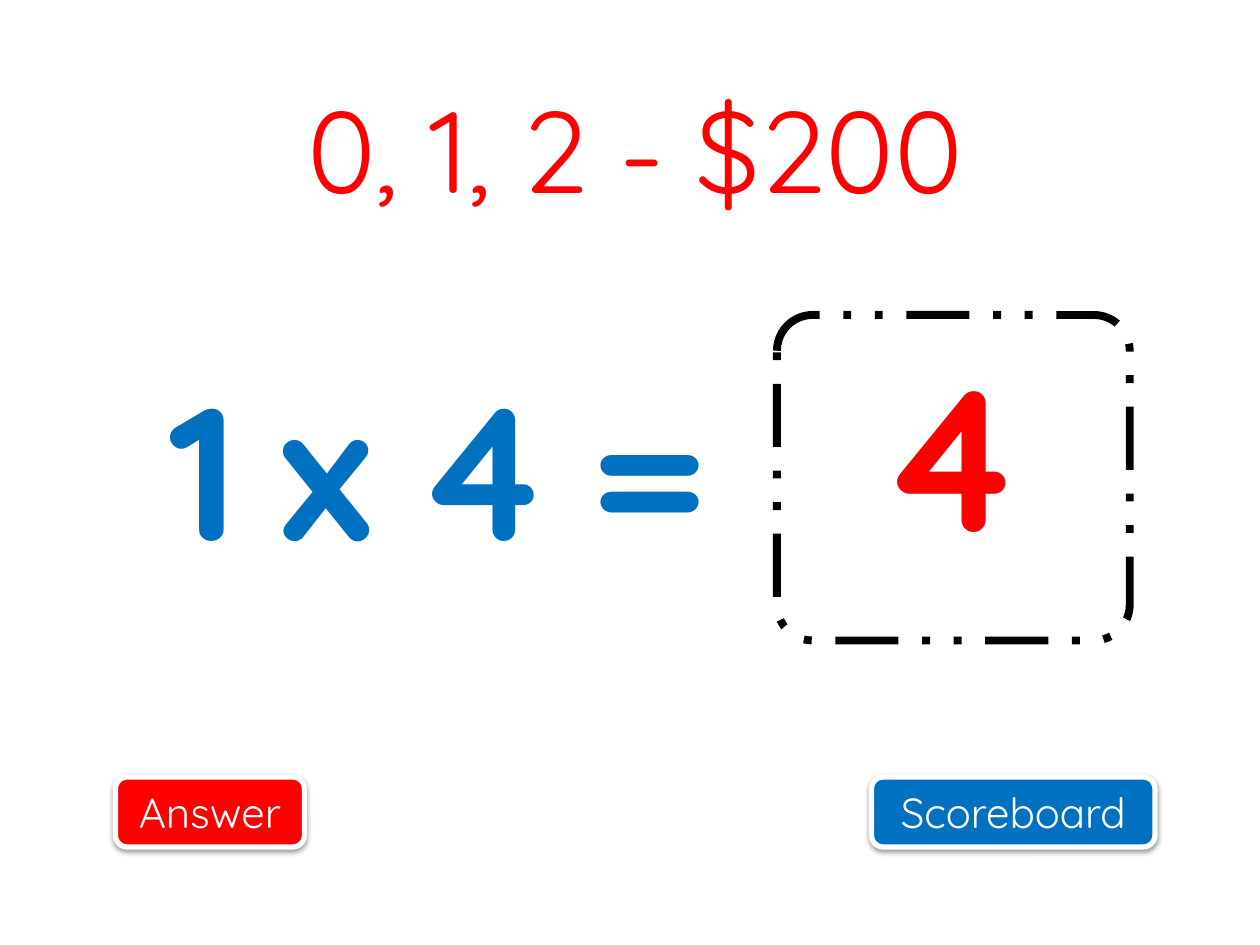
from dataclasses import dataclass

import pptx
import pptx.dml.color
import pptx.enum.dml
import pptx.enum.shapes
import pptx.enum.text
import pptx.oxml
import pptx.oxml.ns
import pptx.util

Pt = pptx.util.Pt
RGB = pptx.dml.color.RGBColor
Align = pptx.enum.text.PP_ALIGN
Anchor = pptx.enum.text.MSO_ANCHOR


@dataclass(frozen=True)
class Theme:
    font: str = "Quicksand"
    red: RGB = RGB(0xFF, 0x00, 0x00)
    blue: RGB = RGB(0x00, 0x70, 0xC0)
    white: RGB = RGB(0xFF, 0xFF, 0xFF)
    black: RGB = RGB(0x00, 0x00, 0x00)
    button_size: float = 24
    title_size: float = 66
    question_size: float = 108
    answer_size: float = 115


THEME = Theme()


@dataclass(frozen=True)
class Box:
    left: float
    top: float
    width: float
    height: float

    def lengths(self) -> tuple:
        return Pt(self.left), Pt(self.top), Pt(self.width), Pt(self.height)


@dataclass(frozen=True)
class Button:
    text: str
    box: Box
    fill: RGB


@dataclass(frozen=True)
class Label:
    text: str
    box: Box
    size: float
    color: RGB
    bold: bool = False
    align: Align = Align.CENTER
    anchor: Anchor = Anchor.TOP
    spacing: float = 0


BUTTONS = [
    Button("Answer", Box(66, 444, 108, 40), THEME.red),
    Button("Scoreboard", Box(498, 444, 162, 40), THEME.blue),
]
QUESTION = Label("1 x 4 =", Box(90, 198, 570, 168), THEME.question_size, THEME.blue,
                 bold=True, align=Align.LEFT, spacing=-3)
ANSWER_FRAME = Box(444, 180, 201.6, 186)
ANSWER = Label("4", Box(462, 186, 162, 168), THEME.answer_size, THEME.red, bold=True)
TITLE = Label("0, 1, 2 - $200", Box(66, 48, 594, 72), THEME.title_size, THEME.red,
              anchor=Anchor.MIDDLE)


def write_text(s, text: str, size: float, color: RGB, bold: bool, align: Align,
               anchor: Anchor, spacing: float = 0) -> None:
    tf = s.text_frame
    tf.word_wrap = True
    tf.vertical_anchor = anchor
    p = tf.paragraphs[0]
    p.alignment = align
    r = p.add_run()
    r.text = text
    p.font.name = THEME.font
    p.font.size = Pt(size)
    p.font.bold = bold
    p.font.color.rgb = color
    if spacing:
        r._r.get_or_add_rPr().set("spc", str(round(spacing * 100)))


def add_round_rect(slide, box: Box, fill: RGB, line: RGB, line_width: float):
    s = slide.shapes.add_shape(
        pptx.enum.shapes.MSO_SHAPE.ROUNDED_RECTANGLE, *box.lengths())
    s.shadow.inherit = False
    s.fill.solid()
    s.fill.fore_color.rgb = fill
    s.line.color.rgb = line
    s.line.width = Pt(line_width)
    return s


def add_drop_shadow(s) -> None:
    """Fill the shape's empty effect list with a soft shadow falling downwards."""
    effects = s._element.spPr.find(pptx.oxml.ns.qn("a:effectLst"))
    effects.append(pptx.oxml.parse_xml(
        f'<a:outerShdw {pptx.oxml.ns.nsdecls("a")} blurRad="{int(Pt(3.1))}" '
        f'dist="{int(Pt(1.6))}" dir="5400000" rotWithShape="0">'
        f'<a:srgbClr val="{THEME.black}"><a:alpha val="38000"/></a:srgbClr>'
        '</a:outerShdw>'))


def add_button(slide, button: Button) -> None:
    s = add_round_rect(slide, button.box, button.fill, THEME.white, 3)
    add_drop_shadow(s)
    write_text(s, button.text, THEME.button_size, THEME.white, False,
               Align.CENTER, Anchor.MIDDLE)


def add_label(slide, label: Label) -> None:
    s = slide.shapes.add_textbox(*label.box.lengths())
    write_text(s, label.text, label.size, label.color, label.bold,
               label.align, label.anchor, label.spacing)


def add_answer_frame(slide) -> None:
    s = add_round_rect(slide, ANSWER_FRAME, THEME.white, THEME.black, 4.5)
    s.adjustments[0] = 0.11
    s.line.dash_style = pptx.enum.dml.MSO_LINE.DASH_DOT_DOT


def main() -> None:
    prs = pptx.Presentation()
    prs.slide_width, prs.slide_height = Pt(720), Pt(540)
    slide = prs.slides.add_slide(prs.slide_layouts[6])
    for button in BUTTONS:
        add_button(slide, button)
    add_label(slide, QUESTION)
    add_answer_frame(slide)
    add_label(slide, ANSWER)
    add_label(slide, TITLE)
    prs.save("out.pptx")


if __name__ == "__main__":
    main()
